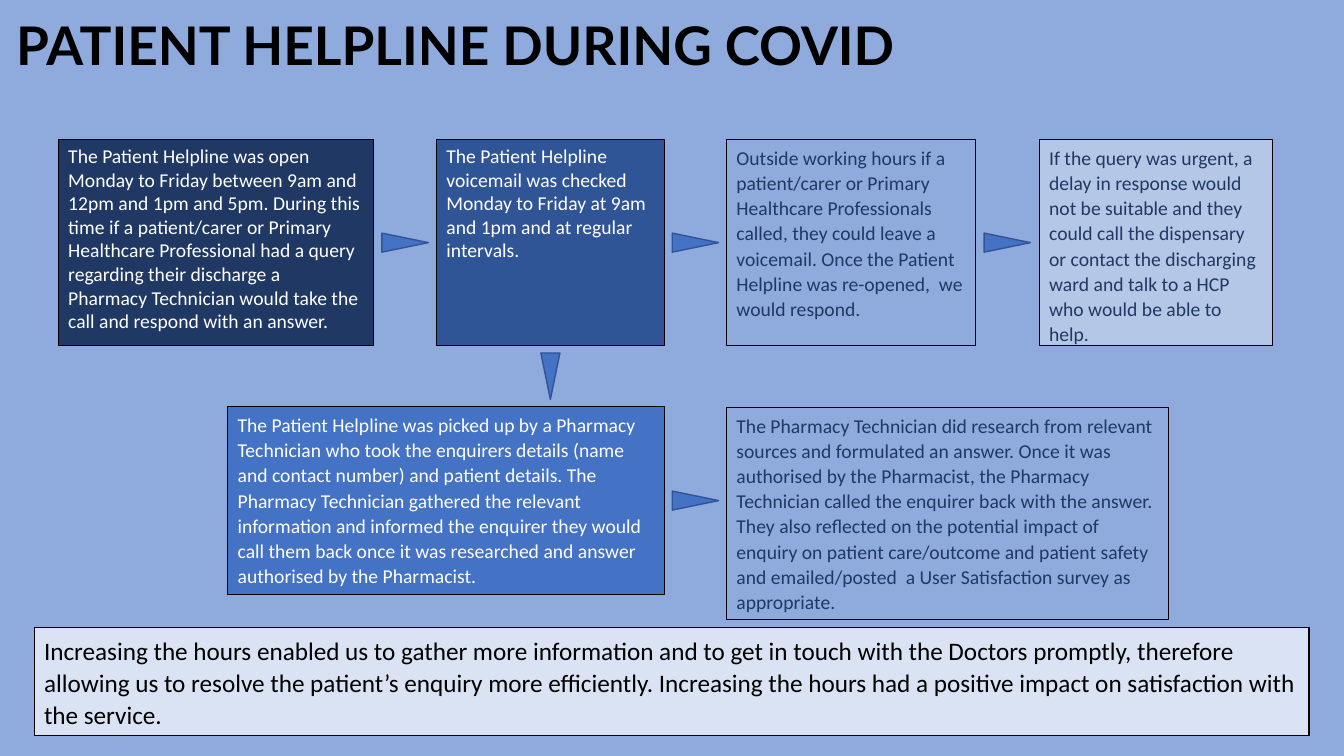
from pptx import Presentation
from pptx.dml.color import RGBColor
from pptx.enum.shapes import MSO_SHAPE
from pptx.enum.text import MSO_ANCHOR, PP_ALIGN
from pptx.util import Cm, Pt

BLACK = RGBColor(0x00, 0x00, 0x00)
WHITE = RGBColor(0xFF, 0xFF, 0xFF)
NAVY = RGBColor(0x20, 0x38, 0x64)
DARK_BLUE = RGBColor(0x2F, 0x55, 0x97)
BLUE = RGBColor(0x44, 0x72, 0xC4)
SKY = RGBColor(0x8F, 0xAA, 0xDC)
LIGHT_BLUE = RGBColor(0xB4, 0xC7, 0xE7)
PALE_BLUE = RGBColor(0xDA, 0xE3, 0xF3)

TITLE = "PATIENT HELPLINE DURING COVID"
OPEN_SPACING = {"line_spacing": 1.07, "space_after": 8}

# name: (left, top, width, height) in cm, fill, text, text format
BOXES = {
    "summary": (
        (0.86, 15.82, 32.13, 2.72), PALE_BLUE,
        "Increasing the hours enabled us to gather more information and to get in touch with "
        "the Doctors promptly, therefore allowing us to resolve the patient’s enquiry more "
        "efficiently. Increasing the hours had a positive impact on satisfaction with the service.",
        {"size": 18, "color": BLACK, **OPEN_SPACING}),
    "opening hours": (
        (1.47, 3.51, 7.95, 5.21), NAVY,
        "The Patient Helpline was open Monday to Friday between 9am and 12pm and 1pm and 5pm. "
        "During this time if a patient/carer or Primary Healthcare Professional had a query "
        "regarding their discharge a Pharmacy Technician would take the call and respond with "
        "an answer.",
        {"color": WHITE}),
    "voicemail": (
        (11.0, 3.51, 5.74, 5.21), DARK_BLUE,
        "The Patient Helpline voicemail was checked Monday to Friday at 9am and 1pm and at "
        "regular intervals.",
        {"color": WHITE}),
    "out of hours": (
        (18.31, 3.51, 6.27, 5.21), SKY,
        "Outside working hours if a patient/carer or Primary Healthcare Professionals called, "
        "they could leave a voicemail. Once the Patient Helpline was re-opened,  we would respond.",
        {"color": NAVY, **OPEN_SPACING}),
    "urgent": (
        (26.19, 3.51, 5.87, 5.21), LIGHT_BLUE,
        "If the query was urgent, a delay in response would not be suitable and they could call "
        "the dispensary or contact the discharging ward and talk to a HCP who would be able to help.",
        {"color": NAVY, **OPEN_SPACING}),
    "pick-up": (
        (5.74, 10.24, 11.0, 4.75), BLUE,
        "The Patient Helpline was picked up by a Pharmacy Technician who took the enquirers "
        "details (name and contact number) and patient details. The Pharmacy Technician gathered "
        "the relevant information and informed the enquirer they would call them back once it was "
        "researched and answer authorised by the Pharmacist.",
        {"color": WHITE, **OPEN_SPACING}),
    "research": (
        (18.31, 10.26, 11.13, 5.36), SKY,
        "The Pharmacy Technician did research from relevant sources and formulated an answer. "
        "Once it was authorised by the Pharmacist, the Pharmacy Technician called the enquirer "
        "back with the answer. They also reflected on the potential impact of enquiry on patient "
        "care/outcome and patient safety and emailed/posted  a User Satisfaction survey as "
        "appropriate.",
        {"color": NAVY, **OPEN_SPACING}),
}
STEPS_ACROSS = [("opening hours", "voicemail"), ("voicemail", "out of hours"),
                ("out of hours", "urgent"), ("pick-up", "research")]
STEP_DOWN = ("voicemail", "pick-up")
ARROW_WIDTH, ARROW_LENGTH = 0.48, 1.17


def write_text(shape, text, *, size=14, font="Calibri", color=BLACK, bold=False,
               anchor=MSO_ANCHOR.TOP, line_spacing=None, space_after=0):
    frame = shape.text_frame
    frame.word_wrap = True
    frame.vertical_anchor = anchor
    paragraph = frame.paragraphs[0]
    paragraph.alignment = PP_ALIGN.LEFT
    paragraph.line_spacing = line_spacing
    paragraph.space_after = Pt(space_after)
    run = paragraph.add_run()
    run.text = text
    run.font.name = font
    run.font.size = Pt(size)
    run.font.bold = bold
    run.font.color.rgb = color


def add_filled(slide, kind, place, fill, line, line_width):
    shape = slide.shapes.add_shape(kind, *map(Cm, place))
    shape.shadow.inherit = False
    shape.fill.solid()
    shape.fill.fore_color.rgb = fill
    shape.line.color.rgb = line
    shape.line.width = Pt(line_width)
    return shape


def add_arrow(slide, center_x, center_y, rotation):
    place = (center_x - ARROW_WIDTH / 2, center_y - ARROW_LENGTH / 2, ARROW_WIDTH, ARROW_LENGTH)
    arrow = add_filled(slide, MSO_SHAPE.ISOSCELES_TRIANGLE, place, BLUE, DARK_BLUE, 1)
    arrow.rotation = rotation


def main():
    presentation = Presentation()
    presentation.slide_width, presentation.slide_height = Cm(33.87), Cm(19.05)
    slide = presentation.slides.add_slide(presentation.slide_layouts[6])
    slide.background.fill.solid()
    slide.background.fill.fore_color.rgb = SKY

    title = slide.shapes.add_textbox(Cm(0.28), Cm(0.89), Cm(23.47), Cm(1.04))
    frame = title.text_frame
    frame.margin_left = frame.margin_right = Cm(0.13)
    frame.margin_top = frame.margin_bottom = Cm(0)
    write_text(title, TITLE, size=38, font="Lato", bold=True, anchor=MSO_ANCHOR.BOTTOM)

    for place, fill, text, text_format in BOXES.values():
        box = add_filled(slide, MSO_SHAPE.RECTANGLE, place, fill, BLACK, 0.75)
        write_text(box, text, **text_format)

    for start, end in STEPS_ACROSS:
        left, top, width, height = BOXES[start][0]
        add_arrow(slide, (left + width + BOXES[end][0][0]) / 2, top + height / 2, 90)
    left, top, width, height = BOXES[STEP_DOWN[0]][0]
    add_arrow(slide, left + width / 2, (top + height + BOXES[STEP_DOWN[1]][0][1]) / 2, 180)

    presentation.save("out.pptx")


if __name__ == "__main__":
    main()
